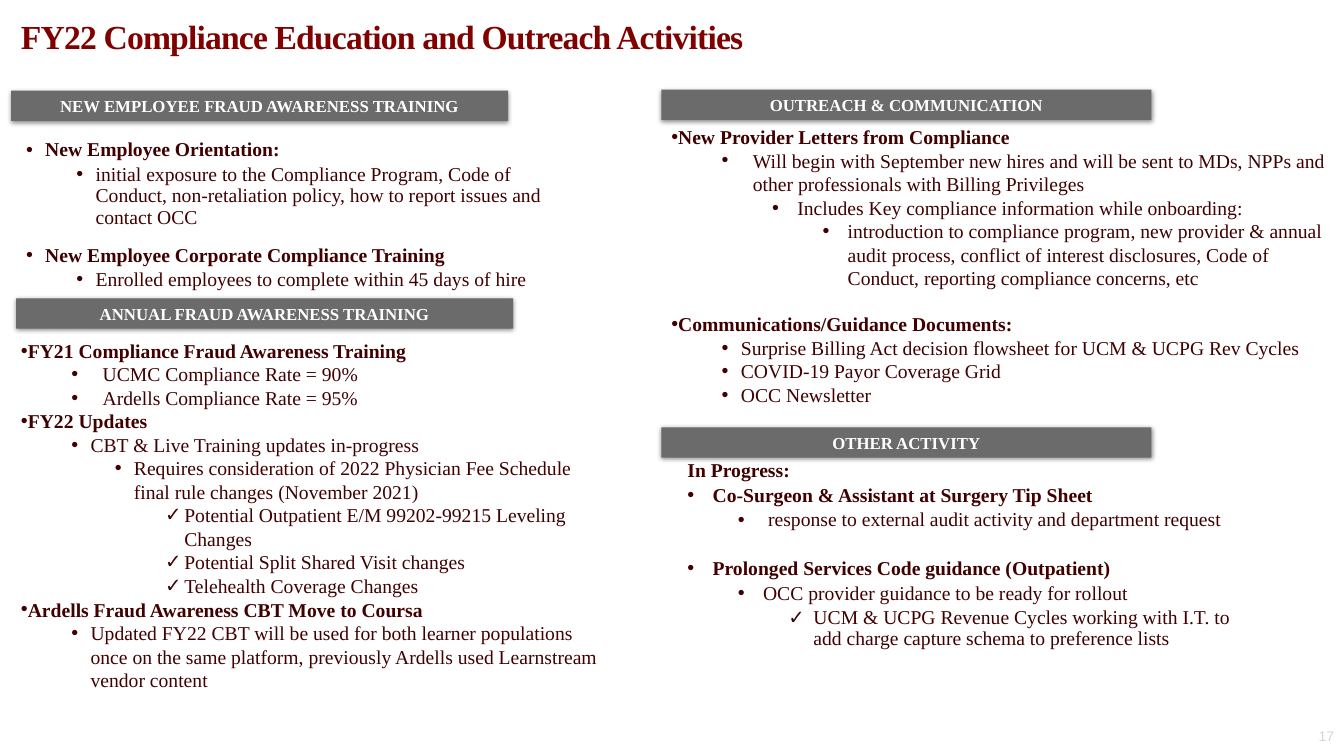
"""Build the compliance education and outreach slide."""
from typing import NamedTuple

from lxml.etree import SubElement
from pptx import Presentation
from pptx.dml.color import RGBColor as Rgb
from pptx.enum.shapes import MSO_SHAPE as Kind
from pptx.enum.text import MSO_AUTO_SIZE as Fit, PP_ALIGN as Align
from pptx.oxml.ns import qn
from pptx.util import Emu, Pt

SCALE = 9144
SERIF = "Times New Roman"
INK = "400000"


class Box(NamedTuple):
    """Place of a shape in px."""
    left: int
    top: int
    width: int
    height: int


class Item(NamedTuple):
    """One paragraph of a list; level 0 is bold."""
    text: str
    level: int = 0
    edge: int = 0
    hang: int = 31
    mark: str = "•"
    before: float = 0


class Panel(NamedTuple):
    """A list with its place and line rules."""
    box: Box
    items: list[Item]
    line: float = 1.0
    after: float = 0


class Banner(NamedTuple):
    """A grey section heading."""
    text: str
    box: Box


BANNERS = [
    Banner("NEW EMPLOYEE FRAUD AWARENESS TRAINING", Box(11, 90, 493, 30)),
    Banner("ANNUAL FRAUD AWARENESS TRAINING", Box(16, 296, 493, 30)),
    Banner("OUTREACH & COMMUNICATION", Box(656, 89, 486, 30)),
    Banner("OTHER ACTIVITY", Box(656, 424, 486, 30)),
]

PANELS = [
    Panel(Box(16, 134, 542, 163), [
        Item("New Employee Orientation:", 0, 19, 19),
        Item("initial exposure to the Compliance Program, Code of Conduct, "
             "non-retaliation policy, how to report issues and contact OCC",
             1, 69, 19, before=2.5),
        Item("New Employee Corporate Compliance Training", 0, 19, 19, before=12),
        Item("Enrolled employees to complete within 45 days of hire",
             1, 69, 19, before=2.5),
    ], line=0.9),
    Panel(Box(11, 331, 605, 364), [
        Item("FY21 Compliance Fraud Awareness Training"),
        Item("UCMC Compliance Rate = 90%", 1, 81),
        Item("Ardells Compliance Rate = 95%", 1, 81),
        Item("FY22 Updates"),
        Item("CBT & Live Training updates in-progress", 1, 69, 19),
        Item("Requires consideration of 2022 Physician Fee Schedule final "
             "rule changes (November 2021)", 2, 112, 19),
        Item("Potential Outpatient E/M 99202-99215 Leveling Changes",
             3, 162, 19, "✓"),
        Item("Potential Split Shared Visit changes", 3, 162, 19, "✓"),
        Item("Telehealth Coverage Changes", 3, 162, 19, "✓"),
        Item("Ardells Fraud Awareness CBT Move to Coursa"),
        Item("Updated FY22 CBT will be used for both learner populations once "
             "on the same platform, previously Ardells used Learnstream "
             "vendor content", 1, 69, 19),
    ]),
    Panel(Box(656, 119, 677, 293), [
        Item("New Provider Letters from Compliance"),
        Item("Will begin with September new hires and will be sent to MDs, "
             "NPPs and other professionals with Billing Privileges", 1, 81),
        Item("Includes Key compliance information while onboarding:", 2, 125, 25),
        Item("introduction to compliance program, new provider & annual audit "
             "process, conflict of interest disclosures, Code of Conduct, "
             "reporting compliance concerns, etc", 3, 175, 25),
        Item("Communications/Guidance Documents:", before=16),
        Item("Surprise Billing Act decision flowsheet for UCM & UCPG Rev Cycles",
             1, 69, 19),
        Item("COVID-19 Payor Coverage Grid", 1, 69, 19),
        Item("OCC Newsletter", 1, 69, 19),
    ]),
    Panel(Box(672, 452, 563, 201), [
        Item("In Progress:", hang=0, mark=""),
        Item("Co-Surgeon & Assistant at Surgery Tip Sheet", 0, 25, 25),
        Item("response to external audit activity and department request",
             1, 80, 30),
        Item("Prolonged Services Code guidance (Outpatient)", 0, 25, 25,
             before=17),
        Item("OCC provider guidance to be ready for rollout", 1, 75, 25),
        Item("UCM & UCPG Revenue Cycles working with I.T. to add charge "
             "capture schema to preference lists", 2, 125, 25, "✓"),
    ], line=0.9, after=2.5),
]


def px(num: int) -> Emu:
    """Turn px into EMU."""
    return Emu(num * SCALE)


def hue(code: str) -> Rgb:
    """Turn a hex string into a colour."""
    return Rgb.from_string(code)


def style(para, size: float, code: str, bold: bool = False,
          face: str = SERIF) -> None:
    """Format every run of a paragraph."""
    for run in para.runs:
        font = run.font
        font.name, font.size, font.bold = face, Pt(size), bold
        font.color.rgb = hue(code)


def add_text(slide, box: Box):
    """Add a wrapping text box and return its frame."""
    frame = slide.shapes.add_textbox(*map(px, box)).text_frame
    frame.word_wrap = True
    return frame


def add_banner(slide, banner: Banner) -> None:
    """Draw a section heading with a soft shadow."""
    shape = slide.shapes.add_shape(Kind.RECTANGLE, *map(px, banner.box))
    shape.fill.solid()
    shape.fill.fore_color.rgb = hue("6B6B6B")
    shape.line.fill.background()
    shape.shadow.inherit = False
    glow = SubElement(shape.element.spPr.find(qn("a:effectLst")),
                      qn("a:outerShdw"), blurRad=str(Pt(3.5)),
                      dist=str(Pt(1.1)), dir="5400000", rotWithShape="0")
    tint = SubElement(glow, qn("a:srgbClr"), val="000000")
    SubElement(tint, qn("a:alpha"), val="45000")
    frame = shape.text_frame
    frame.text = banner.text
    frame.word_wrap = True
    frame.auto_size = Fit.SHAPE_TO_FIT_TEXT
    para = frame.paragraphs[0]
    para.alignment = Align.CENTER
    style(para, 12, "FFFFFF", True)


def add_item(para, item: Item, panel: Panel) -> None:
    """Fill one list paragraph."""
    para.text = item.text
    prop = para._p.get_or_add_pPr()
    prop.set("marL", str(px(item.edge)))
    prop.set("indent", str(px(-item.hang)))
    if item.mark:
        SubElement(prop, qn("a:buFont"), typeface="Arial")
        SubElement(prop, qn("a:buChar"), char=item.mark)
    para.level = item.level
    para.line_spacing = panel.line
    para.space_before = Pt(item.before)
    para.space_after = Pt(panel.after)
    style(para, 14, INK, item.level == 0)


def add_panel(slide, panel: Panel) -> None:
    """Draw a list."""
    frame = add_text(slide, panel.box)
    frame.auto_size = Fit.SHAPE_TO_FIT_TEXT
    for num, item in enumerate(panel.items):
        para = frame.add_paragraph() if num else frame.paragraphs[0]
        add_item(para, item, panel)


def main() -> None:
    """Build and save the deck."""
    deck = Presentation()
    deck.slide_width, deck.slide_height = px(1333), px(750)
    slide = deck.slides.add_slide(deck.slide_layouts[6])

    title = add_text(slide, Box(11, 15, 930, 37))
    title.text = "FY22 Compliance Education and Outreach Activities"
    head = title.paragraphs[0]
    head.line_spacing = 0.9
    style(head, 24, "800000", True)
    head.runs[0].font._element.set("spc", "-60")

    for panel in PANELS:
        add_panel(slide, panel)
    for banner in BANNERS:
        add_banner(slide, banner)

    page = add_text(slide, Box(1201, 717, 132, 33))
    page.text = "17"
    page.paragraphs[0].alignment = Align.RIGHT
    style(page.paragraphs[0], 10, "D6D6D0", face="Arial")
    deck.save("out.pptx")


if __name__ == "__main__":
    main()
